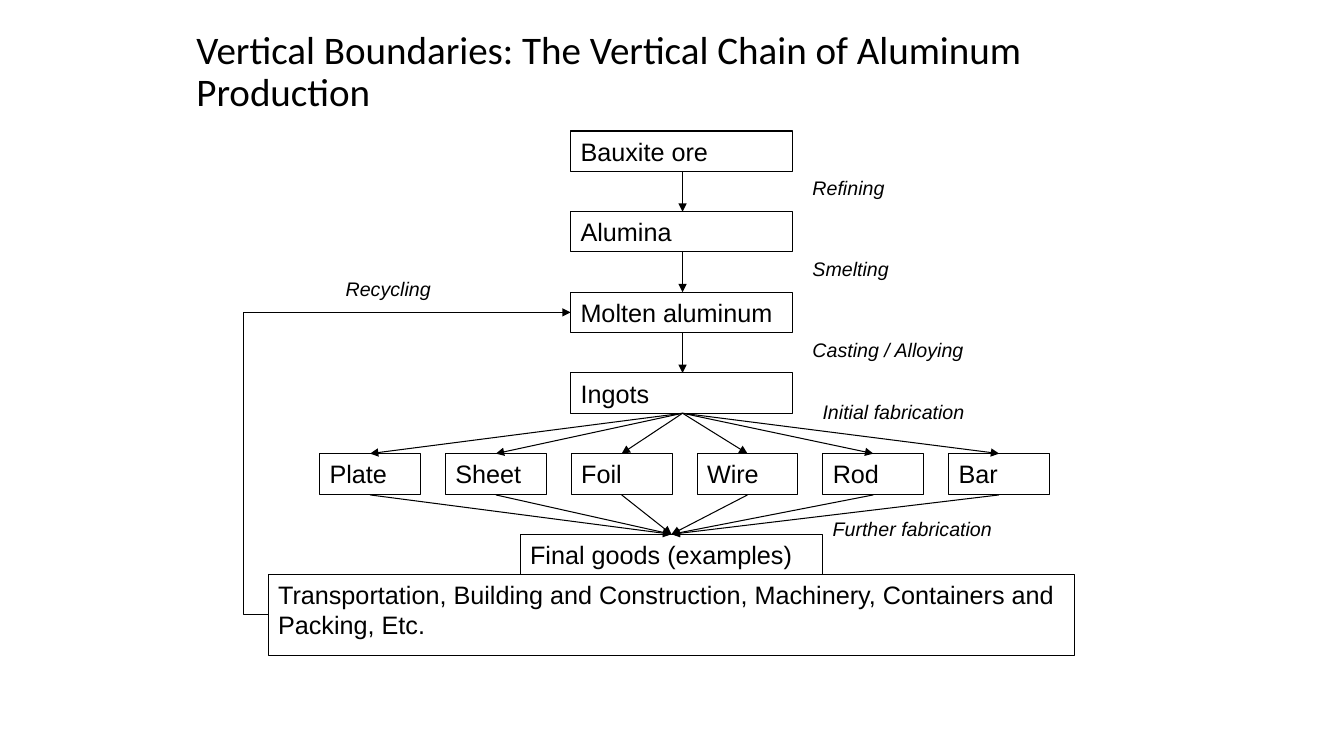
"""Build the slide on the vertical chain of aluminum production."""
import pptx
import pptx.dml.color
import pptx.enum.shapes
import pptx.enum.text
import pptx.oxml.ns
import pptx.util
from lxml import etree

Inches = pptx.util.Inches
Kind = pptx.enum.shapes.MSO_CONNECTOR
Anchor = pptx.enum.text.MSO_ANCHOR

TITLE = "Vertical Boundaries: The Vertical Chain of Aluminum Production"
STAGES = ["Bauxite ore", "Alumina", "Molten aluminum", "Ingots"]
FORMS = ["Plate", "Sheet", "Foil", "Wire", "Rod", "Bar"]
GOODS = "Final goods (examples)"
USES = ("Transportation, Building and Construction, Machinery, "
        "Containers and Packing, Etc.")
LABELS = [
    ("Refining", 7.96, 1.7, 1.5),
    ("Smelting", 7.96, 2.5, 1.5),
    ("Casting / Alloying", 7.96, 3.3, 2.37),
    ("Initial fabrication", 8.06, 3.92, 1.83),
    ("Further fabrication", 8.16, 5.08, 1.83),
    ("Recycling", 3.33, 2.7, 1.5),
]
INK = "000000"
LEFT, TOP, WIDE, HIGH, STEP = 5.66, 1.3, 2.2, 0.4, 0.8
ROW, FIRST, PITCH, SIDE, DEEP = 4.5, 3.17, 1.248, 1, 0.41
AXIS, HUB = 6.77, (6.66, 5.3)


def color(code):
    return pptx.dml.color.RGBColor.from_string(code)


def write(shape, text, size, face="Arial", slant=False, anchor=Anchor.TOP):
    frame = shape.text_frame
    frame.word_wrap = True
    frame.vertical_anchor = anchor
    para = frame.paragraphs[0]
    para.text = text
    para.alignment = pptx.enum.text.PP_ALIGN.LEFT
    font = para.font
    font.name, font.size, font.italic = face, pptx.util.Pt(size), slant
    font.color.rgb = color(INK)
    return para


def stroke(shape):
    shape.line.color.rgb = color(INK)
    shape.line.width = pptx.util.Pt(0.75)


def box(shapes, text, *place):
    rect = shapes.add_shape(pptx.enum.shapes.MSO_SHAPE.RECTANGLE,
                            *map(Inches, place))
    rect.shadow.inherit = False
    rect.fill.background()
    stroke(rect)
    write(rect, text, 18)


def label(shapes, place, *args, **style):
    area = shapes.add_textbox(*map(Inches, place))
    return write(area, *args, **style)


def arrow(shapes, start, end, kind=Kind.STRAIGHT):
    link = shapes.add_connector(kind, *map(Inches, start + end))
    stroke(link)
    props = link._element.spPr
    etree.SubElement(link.line._get_or_add_ln(),
                     pptx.oxml.ns.qn("a:tailEnd"), type="triangle")
    etree.SubElement(props, pptx.oxml.ns.qn("a:effectLst"))
    return props


def main():
    deck = pptx.Presentation()
    deck.slide_width, deck.slide_height = Inches(13.33), Inches(7.5)
    shapes = deck.slides.add_slide(deck.slide_layouts[6]).shapes

    head = label(shapes, (1.85, 0.31, 10.13, 0.82), TITLE, 27.9,
                 face="Calibri", anchor=Anchor.MIDDLE)
    head.line_spacing = 0.9

    for i, name in enumerate(STAGES):
        y = TOP + i * STEP
        box(shapes, name, LEFT, y, WIDE, HIGH)
        if i:
            arrow(shapes, (AXIS, y - HIGH), (AXIS, y))

    group = shapes.add_group_shape()
    for i, name in enumerate(FORMS):
        x = FIRST + i * PITCH
        mid = x + SIDE / 2
        box(group.shapes, name, x, ROW, SIDE, DEEP)
        arrow(shapes, (AXIS, ROW - HIGH), (mid, ROW))
        arrow(shapes, (mid, ROW + DEEP), HUB)

    box(shapes, GOODS, 5.16, 5.3, 3, 0.4)
    box(shapes, USES, 2.66, 5.7, 8, 0.8)

    loop = arrow(shapes, (2.66, 6.1), (LEFT, 3.1), Kind.ELBOW)
    bend = loop.find(".//" + pptx.oxml.ns.qn("a:avLst"))
    etree.SubElement(bend, pptx.oxml.ns.qn("a:gd"),
                     name="adj1", fmla="val -8300")

    for text, x, y, width in LABELS:
        label(shapes, (x, y, width, 0.33), text, 14, slant=True)

    deck.save("out.pptx")


if __name__ == "__main__":
    main()
